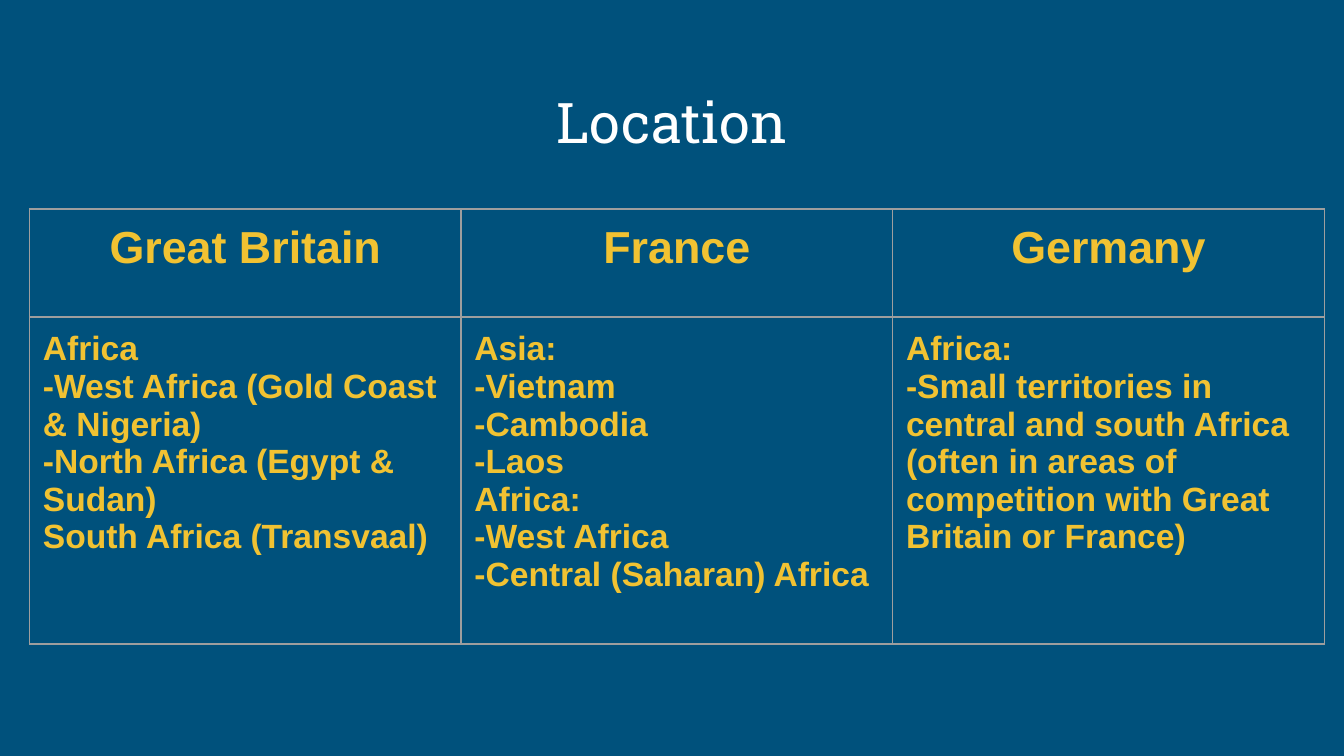
from lxml.etree import SubElement
from pptx import Presentation
from pptx.dml.color import RGBColor
from pptx.enum.text import MSO_ANCHOR as Anchor, PP_ALIGN as Align
from pptx.oxml.ns import qn
from pptx.util import Pt

NAVY = RGBColor(0x00, 0x51, 0x7C)
WHITE = RGBColor(0xFF, 0xFF, 0xFF)
GOLD = RGBColor(0xF1, 0xC2, 0x32)
GREY = RGBColor(0x9E, 0x9E, 0x9E)

TITLE_FONT = {"name": "Roboto Slab", "size": Pt(30), "bold": False}
HEADER_FONT = {"name": "Arial", "size": Pt(24), "bold": True}
BODY_FONT = {**HEADER_FONT, "size": Pt(18)}
MARGINS = dict.fromkeys(
    ("margin_left", "margin_top", "margin_right", "margin_bottom"), Pt(7.2))

TERRITORIES = {
    "Great Britain": [
        "Africa",
        "-West Africa (Gold Coast & Nigeria)",
        "-North Africa (Egypt & Sudan)",
        "South Africa (Transvaal)",
    ],
    "France": [
        "Asia:", "-Vietnam", "-Cambodia", "-Laos",
        "Africa:", "-West Africa", "-Central (Saharan) Africa",
    ],
    "Germany": [
        "Africa:",
        "-Small territories in central and south Africa "
        "(often in areas of competition with Great Britain or France)",
    ],
}


def set_values(target, values):
    for name, value in values.items():
        setattr(target, name, value)


def write_lines(frame, lines, font, color, align):
    """Put each line in its own paragraph."""
    for index, line in enumerate(lines):
        para = frame.add_paragraph() if index else frame.paragraphs[0]
        para.alignment = align
        span = para.add_run()
        span.text = line
        set_values(span.font, font)
        span.font.color.rgb = color


def add_title(page, box, text):
    frame = page.shapes.add_textbox(*box).text_frame
    set_values(frame, {**MARGINS, "word_wrap": True,
                       "vertical_anchor": Anchor.BOTTOM})
    write_lines(frame, [text], TITLE_FONT, WHITE, Align.CENTER)


def add_borders(cell):
    properties = cell._tc.get_or_add_tcPr()
    for index, side in enumerate(("lnL", "lnR", "lnT", "lnB")):
        line = properties.makeelement(qn(f"a:{side}"), {"w": str(Pt(0.75))})
        properties.insert(index, line)
        fill = SubElement(line, qn("a:solidFill"))
        SubElement(fill, qn("a:srgbClr"), val=str(GREY))


def add_territory_table(page, box, header_height):
    left, top, width, height = box
    table = page.shapes.add_table(2, len(TERRITORIES), *box).table
    set_values(table, {"first_row": False, "horz_banding": False})
    table.rows[0].height = header_height
    table.rows[1].height = height - header_height
    for column, (country, places) in enumerate(TERRITORIES.items()):
        table.columns[column].width = width // len(TERRITORIES)
        contents = (([country], HEADER_FONT, Align.CENTER),
                    (places, BODY_FONT, Align.LEFT))
        for row, (lines, font, align) in enumerate(contents):
            cell = table.cell(row, column)
            set_values(cell, MARGINS)
            cell.fill.background()
            add_borders(cell)
            write_lines(cell.text_frame, lines, font, GOLD, align)


def main():
    deck = Presentation()
    set_values(deck, {"slide_width": Pt(720), "slide_height": Pt(405)})
    page = deck.slides.add_slide(deck.slide_layouts[6])
    page.background.fill.solid()
    page.background.fill.fore_color.rgb = NAVY
    add_title(page, (Pt(30.5), Pt(36), Pt(659), Pt(54)), "Location")
    add_territory_table(page, (Pt(15.8), Pt(112), Pt(693.6), Pt(233)), Pt(57.8))
    deck.save("out.pptx")


if __name__ == "__main__":
    main()
